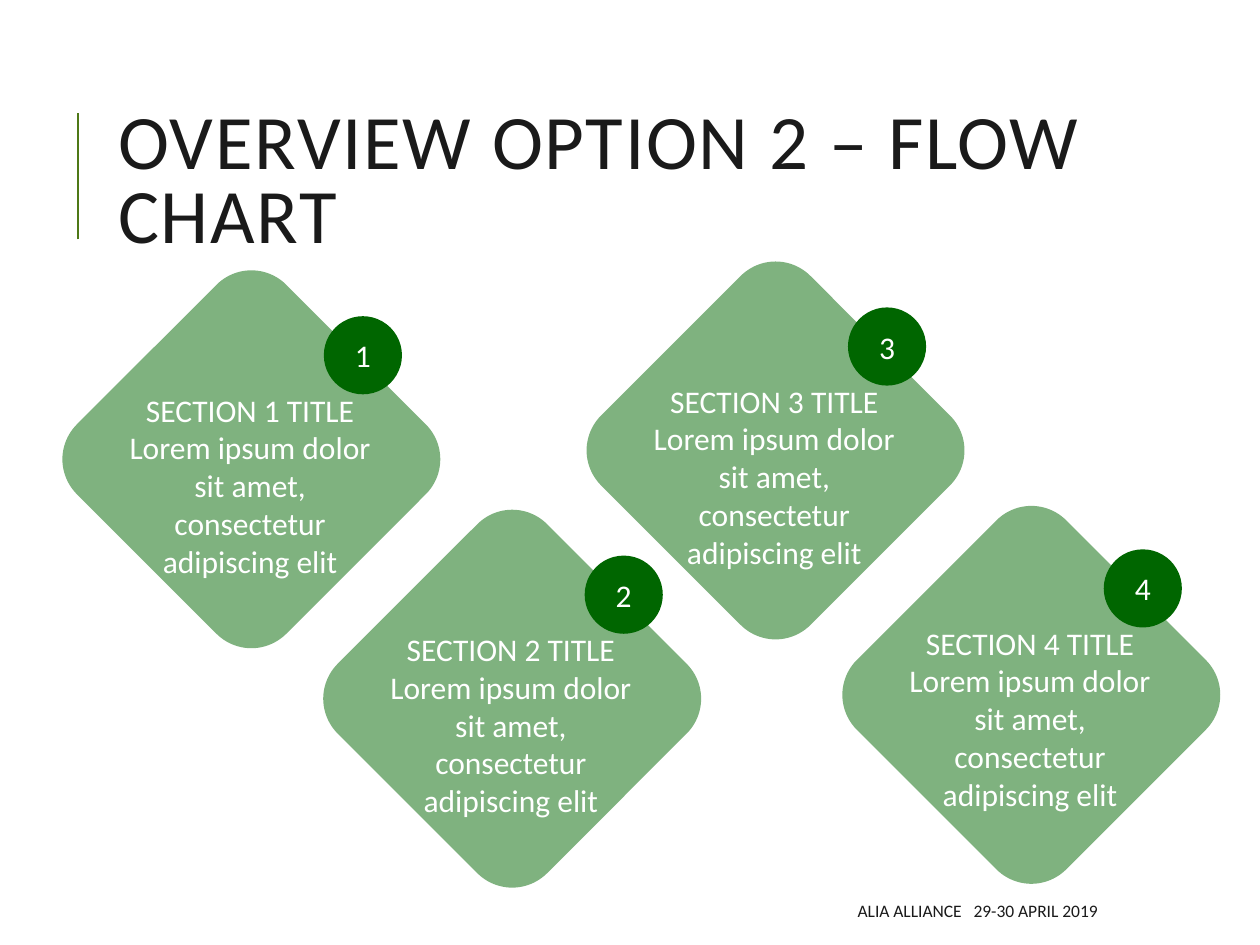
from lxml import etree
from pptx import Presentation
from pptx import util as u
from pptx.dml.color import RGBColor
from pptx.enum import shapes, text
from pptx.oxml.ns import qn

COLORS = {"ink": "1A1A1A", "green": "006600", "rule": "4E7817", "white": "FFFFFF"}
FONT = "Calibri"
BODY = "Lorem ipsum dolor sit amet, consectetur adipiscing elit"

# Section number, left and top of its diamond, lift of its badge and label
SECTIONS = [
    (1, 0.82, 2.47, 0),
    (2, 2.89, 4.37, 0),
    (3, 4.98, 2.40, 0),
    (4, 7.01, 4.34, 0.02),
]
DIAMOND, BADGE = 2.35, 0.62


def color(name):
    return RGBColor.from_string(COLORS[name])


class SlideBuilder:
    def __init__(self, page):
        self.page = page

    def fill_text(self, shape, lines, size, ink, align, anchor):
        """Each line is a list of (words, letter spacing in points)."""
        frame = shape.text_frame
        frame.word_wrap = True
        frame.vertical_anchor = anchor
        for index, pieces in enumerate(lines):
            para = frame.add_paragraph() if index else frame.paragraphs[0]
            para.alignment = align
            para.font.name = FONT
            para.font.size = u.Pt(size)
            para.font.color.rgb = color(ink)
            for words, spacing in pieces:
                span = para.add_run()
                span.text = words
                if spacing:
                    span.font._element.set("spc", str(int(spacing * 100)))
        return frame

    def text(self, left, top, width, height, lines, size, ink,
             align=text.PP_ALIGN.LEFT, anchor=text.MSO_ANCHOR.MIDDLE):
        box = self.page.shapes.add_textbox(
            *map(u.Inches, (left, top, width, height)))
        return self.fill_text(box, lines, size, ink, align, anchor)

    def shape(self, kind, left, top, size, fill):
        shape = self.page.shapes.add_shape(
            kind, *map(u.Inches, (left, top, size, size)))
        shape.shadow.inherit = False
        shape.fill.solid()
        shape.fill.fore_color.rgb = color(fill)
        shape.line.fill.background()
        return shape

    def diamond(self, left, top):
        shape = self.shape(shapes.MSO_SHAPE.ROUNDED_RECTANGLE,
                           left, top, DIAMOND, "green")
        shape.rotation = 45
        tint = shape._element.spPr.find(qn("a:solidFill"))[0]
        etree.SubElement(tint, qn("a:alpha")).set("val", "50000")

    def badge(self, left, top, number):
        shape = self.shape(shapes.MSO_SHAPE.OVAL, left, top, BADGE, "green")
        self.fill_text(shape, [[(str(number), 0)]], 18, "white",
                       text.PP_ALIGN.CENTER, text.MSO_ANCHOR.MIDDLE)

    def label(self, left, top, number):
        lines = [[(f"SECTION {number} TITLE", 0)], [(BODY, 0)]]
        frame = self.text(left, top, 2.25, 1.31, lines, 18, "white",
                          text.PP_ALIGN.CENTER, text.MSO_ANCHOR.TOP)
        frame.auto_size = text.MSO_AUTO_SIZE.SHAPE_TO_FIT_TEXT

    def line(self, x1, y1, x2, y2, ink, weight):
        rule = self.page.shapes.add_connector(
            shapes.MSO_CONNECTOR.STRAIGHT, *map(u.Inches, (x1, y1, x2, y2)))
        rule.line.color.rgb = color(ink)
        rule.line.width = u.Pt(weight)
        etree.SubElement(rule._element.spPr, qn("a:effectLst"))


def main():
    deck = Presentation()
    deck.slide_width, deck.slide_height = u.Inches(10), u.Inches(7.5)
    builder = SlideBuilder(deck.slides.add_slide(deck.slide_layouts[6]))

    # Title with its side rule
    builder.line(0.62, 1.9, 0.62, 0.9, "rule", 1.5)
    title = builder.text(0.84, 0.64, 7.97, 1.64,
                         [[("OVERVIEW OPTION 2 – FLOW CHART", 1)]], 44, "ink")
    title.paragraphs[0].line_spacing = 0.8

    # Numbered sections
    for number, left, top, lift in SECTIONS:
        builder.diamond(left, top)
        builder.badge(left + 1.75, top + 0.04 - lift, number)
        builder.label(left + 0.04, top + 0.58 - lift, number)

    # Footer, with a widened space between event and date
    builder.text(3.97, 7.08, 4.84, 0.3,
                 [[("ALIA ALLIANCE", 0), (" ", 4.5), ("29-30 APRIL 2019", 0)]],
                 10, "ink", text.PP_ALIGN.RIGHT)

    deck.save("out.pptx")


if __name__ == "__main__":
    main()
